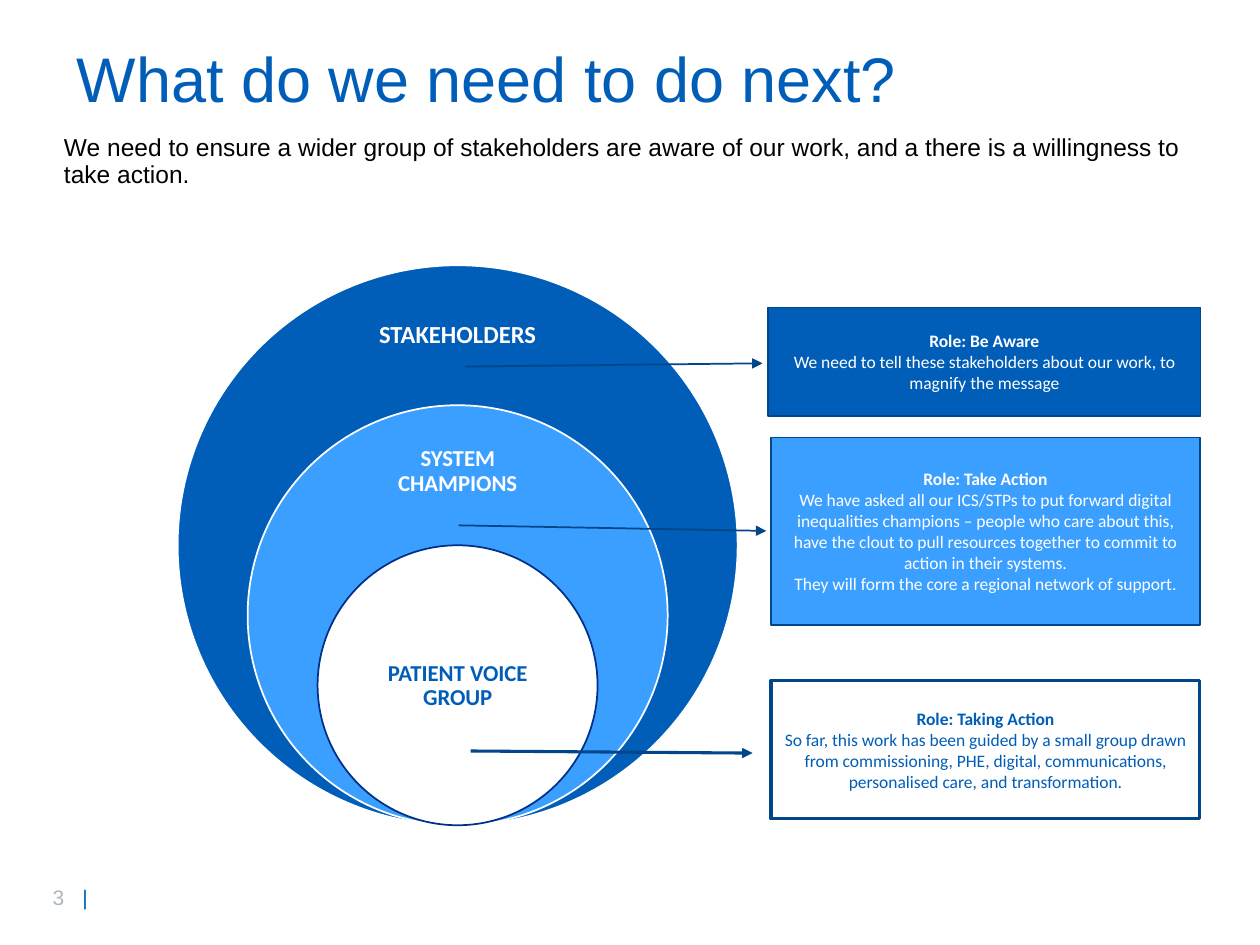
from lxml.etree import SubElement
from pptx import Presentation
from pptx.dml.color import RGBColor
from pptx.enum.shapes import MSO_SHAPE
from pptx.enum.text import MSO_ANCHOR, PP_ALIGN
from pptx.oxml.ns import qn
from pptx.util import Pt

COLORS = {
    "blue": "005EB8", "sky": "3B9FFF", "white": "FFFFFF", "black": "000000",
    "navy": "003087", "edge": "004688", "grey": "ADB6BE",
}


def rgb(name):
    return RGBColor.from_string(COLORS[name])


class Deck:
    heading_font = "Arial"
    label_font = "Calibri"

    def __init__(self, prs):
        self.s = prs.slides.add_slide(prs.slide_layouts[5])

    def set_font(self, font, name, size, color, bold=False):
        font.name, font.size, font.bold = name, Pt(size), bold
        font.color.rgb = rgb(color)

    def title(self, text, x, y, w, h):
        sp = self.s.shapes.title
        sp.left, sp.top, sp.width, sp.height = Pt(x), Pt(y), Pt(w), Pt(h)
        tf = sp.text_frame
        tf.text = text
        tf.vertical_anchor = MSO_ANCHOR.MIDDLE
        p = tf.paragraphs[0]
        p.alignment, p.line_spacing = PP_ALIGN.LEFT, 0.9
        self.set_font(p.font, self.heading_font, 36, color="blue")

    def text(self, text, x, y, w, h, size, color, label=False):
        tf = self.s.shapes.add_textbox(Pt(x), Pt(y), Pt(w), Pt(h)).text_frame
        tf.word_wrap = True
        p = tf.paragraphs[0]
        p.text, p.line_spacing = text, 0.9
        if label:
            tf.vertical_anchor = MSO_ANCHOR.MIDDLE
            p.alignment = PP_ALIGN.CENTER
        font = self.label_font if label else self.heading_font
        self.set_font(p.font, font, size, color, bold=label)

    def shape(self, kind, x, y, w, h, fill, line, weight=1):
        sp = self.s.shapes.add_shape(kind, Pt(x), Pt(y), Pt(w), Pt(h))
        sp.shadow.inherit = False
        sp.fill.solid()
        sp.fill.fore_color.rgb = rgb(fill)
        sp.line.color.rgb = rgb(line)
        sp.line.width = Pt(weight)
        return sp

    def circle(self, center, bottom, size, fill, line):
        self.shape(MSO_SHAPE.OVAL, center - size / 2, bottom - size, size, size, fill, line)

    def callout(self, lines, box, pointer, fill, color, weight):
        sp = self.shape(MSO_SHAPE.LINE_CALLOUT_1, *box, fill, "edge", weight)
        for i, value in enumerate(pointer):
            sp.adjustments[i] = value
        # Arrowhead where the pointer meets the box
        SubElement(sp.line._get_or_add_ln(), qn("a:headEnd"), type="triangle")
        tf = sp.text_frame
        tf.word_wrap = True
        tf.vertical_anchor = MSO_ANCHOR.MIDDLE
        for i, line in enumerate(lines):
            p = tf.paragraphs[0] if i == 0 else tf.add_paragraph()
            p.text, p.alignment = line, PP_ALIGN.CENTER
            self.set_font(p.font, self.label_font, 10, color, bold=i == 0)

    def page_number(self, number, x, y, w, h):
        tf = self.s.shapes.add_textbox(Pt(x), Pt(y), Pt(w), Pt(h)).text_frame
        p = tf.paragraphs[0]
        tabs = SubElement(p._p.get_or_add_pPr(), qn("a:tabLst"))
        SubElement(tabs, qn("a:tab"), pos=str(Pt(17)), algn="l")
        for text, color in ((f"{number}\t", "grey"), ("|", "blue")):
            r = p.add_run()
            r.text = text
            self.set_font(r.font, self.heading_font, 12, color)


def main():
    prs = Presentation()
    prs.slide_width, prs.slide_height = Pt(720), Pt(540)
    deck = Deck(prs)

    # Heading, introduction and page number
    deck.title("What do we need to do next?", 36.7, 23, 517, 48)
    deck.text("We need to ensure a wider group of stakeholders are aware of our work, "
              "and a there is a willingness to take action.",
              29.5, 74, 662, 114.5, 14, "black")
    deck.page_number(3, 23, 502, 51, 21.6)

    # Nested circles resting on the same lowest point
    center, bottom, label_width = 261.5, 471.6, 112
    circles = [
        # diameter, fill, line, label, label top, label height, size, text colour
        (320, "blue", "white", "STAKEHOLDERS", 168, 48, 14, "white"),
        (240, "sky", "white", "SYSTEM CHAMPIONS", 247, 45, 13, "white"),
        (160, "white", "navy", "PATIENT VOICE GROUP", 352, 80, 13, "blue"),
    ]
    for size, fill, line, label, top, height, font_size, color in circles:
        deck.circle(center, bottom, size, fill, line)
        deck.text(label, center - label_width / 2, top, label_width, height,
                  font_size, color, label=True)

    # Role callouts pointing into the circles
    deck.callout(
        ["Role: Taking Action",
         "So far, this work has been guided by a small group drawn from commissioning, "
         "PHE, digital, communications, personalised care, and transformation."],
        (440.6, 388.8, 245, 79.2), (0.525, -0.043, 0.51, -0.701), "white", "blue", 1.75)
    deck.callout(
        ["Role: Take Action",
         "We have asked all our ICS/STPs to put forward digital inequalities champions – "
         "people who care about this, have the clout to pull resources together to commit "
         "to action in their systems.",
         "They will form the core a regional network of support."],
        (440.6, 250, 245, 107.3), (0.498, -0.011, 0.468, -0.729), "sky", "white", 1)
    deck.callout(
        ["Role: Be Aware",
         "We need to tell these stakeholders about our work, to magnify the message"],
        (439, 175.7, 247, 62), (0.515, -0.013, 0.545, -0.702), "blue", "white", 1)

    prs.save("out.pptx")


if __name__ == "__main__":
    main()
